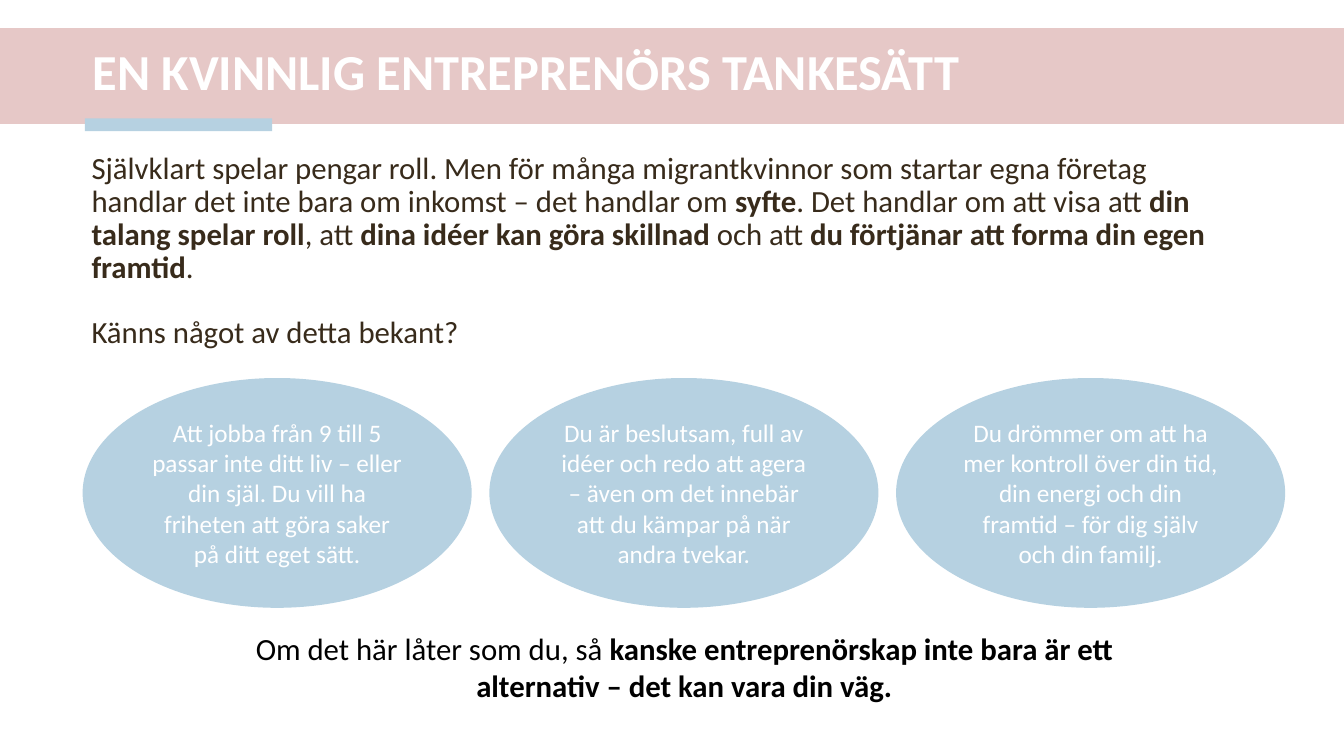
from pptx import Presentation
from pptx.dml.color import RGBColor
from pptx.enum.shapes import MSO_SHAPE
from pptx.enum.text import MSO_ANCHOR, PP_ALIGN
from pptx.util import Emu, Pt

COLUMNS, ROWS = 160, 90
CELL = 76200
FONT = "Calibri"
PINK, BLUE, BROWN, WHITE, BLACK = "E6C8C7", "B6D1E1", "382B1B", "FFFFFF", "000000"
INTRO_LEADING = Pt(23.4)

TITLE = [("EN KVINNLIG ENTREPRENÖRS TANKESÄTT", True)]
INTRO = [
    ("Självklart spelar pengar roll. Men för många migrantkvinnor som startar egna företag "
     "handlar det inte bara om inkomst – det handlar om ", False),
    ("syfte", True),
    (". Det handlar om att visa att ", False),
    ("din talang spelar roll", True),
    (", att ", False),
    ("dina idéer kan göra skillnad ", True),
    ("och att ", False),
    ("du förtjänar att forma din egen framtid", True),
    (".", False),
]
QUESTION = [("Känns något av detta bekant?", False)]
THOUGHTS = [
    "Att jobba från 9 till 5 passar inte ditt liv – eller din själ. "
    "Du vill ha friheten att göra saker på ditt eget sätt.",
    "Du är beslutsam, full av idéer och redo att agera "
    "– även om det innebär att du kämpar på när andra tvekar.",
    "Du drömmer om att ha mer kontroll över din tid, din energi "
    "och din framtid – för dig själv och din familj.",
]
CLOSING = [
    ("Om det här låter som du, så ", False),
    ("kanske entreprenörskap inte bara är ett alternativ – det kan vara din väg.", True),
]


def color(hex_string):
    return RGBColor.from_string(hex_string)


def grid(*cells):
    return [Emu(round(cell * CELL)) for cell in cells]


def add_filled(page, kind, cells, fill):
    shape = page.shapes.add_shape(kind, *grid(*cells))
    shape.shadow.inherit = False
    shape.fill.solid()
    shape.fill.fore_color.rgb = color(fill)
    shape.line.fill.background()
    return shape


def write(shape, paragraphs, size, ink, align=PP_ALIGN.LEFT, anchor=MSO_ANCHOR.TOP,
          leading=None, gap=None):
    frame = shape.text_frame
    frame.word_wrap = True
    frame.vertical_anchor = anchor
    for index, spans in enumerate(paragraphs):
        para = frame.add_paragraph() if index else frame.paragraphs[0]
        para.alignment = align
        para.line_spacing = leading
        if index:
            para.space_before = gap
        for text, bold in spans:
            span = para.add_run()
            span.text = text
            span.font.name = FONT
            span.font.size = Pt(size)
            span.font.bold = bold
            span.font.color.rgb = color(ink)


def add_text(page, cells, paragraphs, size, ink, **layout):
    box = page.shapes.add_textbox(*grid(*cells))
    write(box, paragraphs, size, ink, **layout)


def add_thoughts(page):
    for index, thought in enumerate(THOUGHTS):
        cells = (9.84 + index * 48.42, 45, 46.32, 27.36)
        oval = add_filled(page, MSO_SHAPE.OVAL, cells, BLUE)
        write(oval, [[(thought, False)]], 18, WHITE,
              align=PP_ALIGN.CENTER, anchor=MSO_ANCHOR.MIDDLE)


def main():
    deck = Presentation()
    deck.slide_width, deck.slide_height = grid(COLUMNS, ROWS)
    page = deck.slides.add_slide(deck.slide_layouts[6])
    add_filled(page, MSO_SHAPE.RECTANGLE, (0, 3.36, COLUMNS, 11.4), PINK)
    add_filled(page, MSO_SHAPE.RECTANGLE, (10.1, 14.1, 22.3, 1.5), BLUE)
    add_text(page, (9.84, 4.08, 143.16, 9.48), [TITLE], 36, WHITE,
             anchor=MSO_ANCHOR.MIDDLE, leading=0.9)
    add_text(page, (9.72, 17.64, 138.72, 25.68), [INTRO, QUESTION], 22, BROWN,
             leading=INTRO_LEADING, gap=INTRO_LEADING)
    add_thoughts(page)
    add_text(page, (23.52, 74.4, 115.92, 10.08), [CLOSING], 22, BLACK,
             align=PP_ALIGN.CENTER)
    deck.save("out.pptx")


if __name__ == "__main__":
    main()
